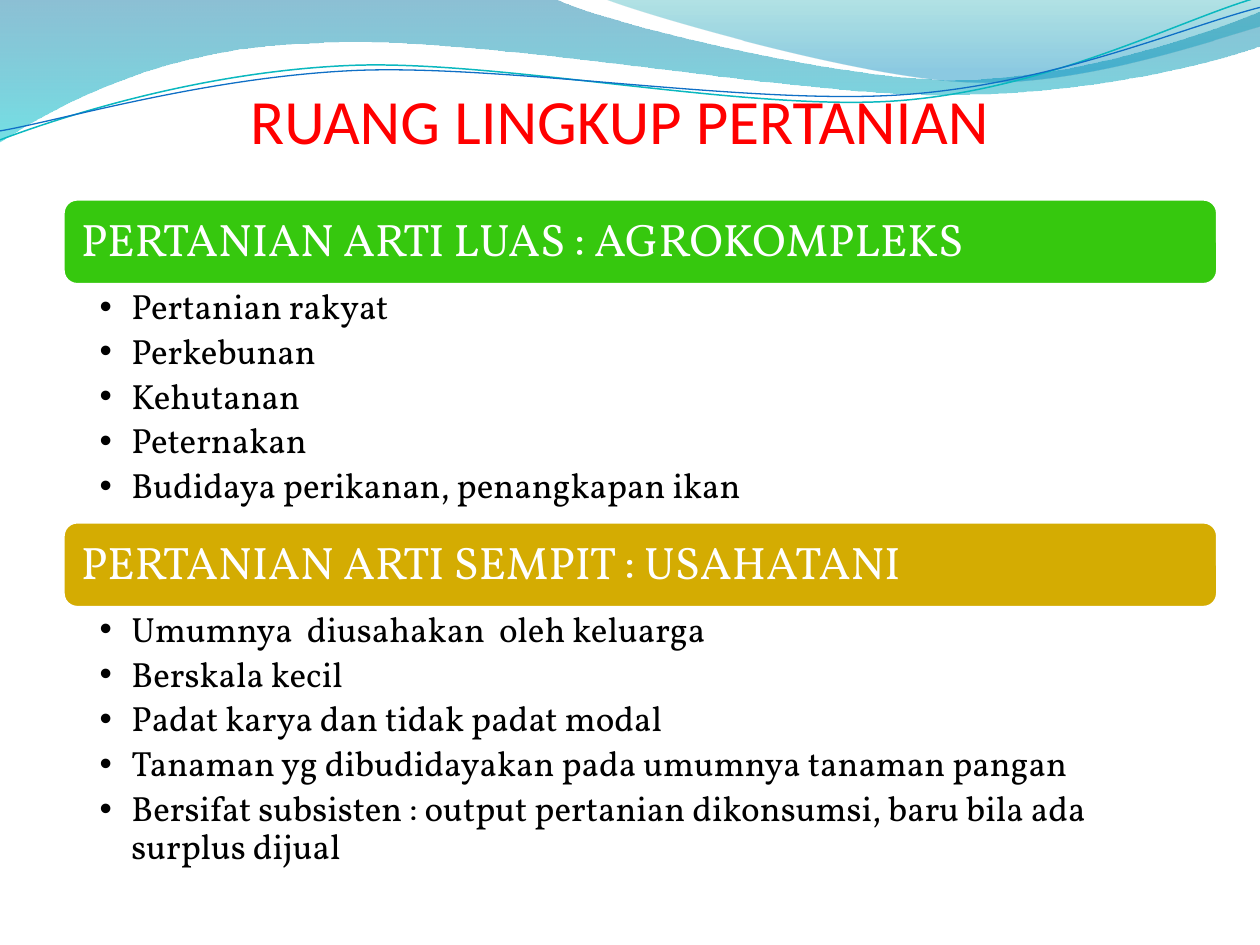
from math import cos, radians, sin

from lxml.etree import SubElement
from pptx import Presentation
from pptx.dml.color import RGBColor
from pptx.enum.shapes import MSO_SHAPE
from pptx.enum.text import MSO_ANCHOR, MSO_AUTO_SIZE, PP_ALIGN
from pptx.oxml.ns import qn
from pptx.util import Cm, Pt

COLORS = {
    "title": "FF0000", "broad": "36C80E", "narrow": "D4AC02",
    "white": "FFFFFF", "black": "000000", "teal_line": "0AB8BF",
    "blue_line": "0F6FC6", "deep_blue": "0074A1", "cyan": "00C6CF",
    "teal": "00A1A9", "sky": "008BBF",
}
BODY_FONT = "Vollkorn"
LINE_TILT = -2.7

WAVES = [
    {"start": (0, 0),
     "segments": [(11.18, -0.03),
                  (12.09, 0.43, 16.87, 1.6, 19.25, 1.6),
                  (21.67, 1.6, 24.33, 0.66, 25.4, 0.23),
                  (25.43, 0.91),
                  (24.97, 1.12, 22.1, 1.93, 18.95, 1.91),
                  (15.8, 1.91, 9.7, 0.71, 6.53, 0.86),
                  (3.28, 0.91, 1.17, 2.11, -0.03, 2.87)],
     "gradient": [(0, "deep_blue", 45), (100, "cyan", 55)]},
    {"start": (12.17, -0.03),
     "segments": [(12.93, 0.28, 17.32, 1.57, 19.53, 1.65),
                  (21.74, 1.75, 24.41, 0.81, 25.4, 0.53),
                  (25.4, 0)],
     "gradient": [(0, "teal", 30), (80, "sky", 45)]},
    {"start": (0, 2.82),
     "segments": [(1.22, 2.36, 4.01, 1.45, 7.04, 1.32),
                  (10.03, 1.19, 15.06, 2.26, 18.11, 2.03),
                  (21.16, 1.8, 23.83, 0.38, 25.35, -0.05)],
     "line": ("teal_line", 0.85), "center": (12.67, 1.46)},
    {"start": (0, 2.64),
     "segments": [(1.19, 2.44, 4.17, 1.55, 7.19, 1.42),
                  (10.24, 1.3, 15.16, 2.13, 18.21, 1.91),
                  (21.23, 1.7, 23.9, 0.53, 25.4, 0.15)],
     "line": ("blue_line", 0.75), "center": (12.69, 1.5)},
]

SECTIONS = [
    {"heading": "PERTANIAN ARTI LUAS : AGROKOMPLEKS", "color": "broad",
     "box": (1.27, 4.01, 23.28, 6.51),
     "items": ["Pertanian rakyat", "Perkebunan", "Kehutanan", "Peternakan",
               "Budidaya perikanan, penangkapan ikan"]},
    {"heading": "PERTANIAN ARTI SEMPIT : USAHATANI", "color": "narrow",
     "box": (1.27, 10.52, 23.28, 7.27),
     "items": ["Umumnya  diusahakan  oleh keluarga", "Berskala kecil",
               "Padat karya dan tidak padat modal",
               "Tanaman yg dibudidayakan pada umumnya tanaman pangan",
               "Bersifat subsisten : output pertanian dikonsumsi, "
               "baru bila ada surplus dijual"]},
]


def rgb(name):
    """Return the named colour."""
    return RGBColor.from_string(COLORS[name])


def place(shape, left, top, width, height):
    """Set a shape's box in centimetres."""
    shape.left, shape.top = Cm(left), Cm(top)
    shape.width, shape.height = Cm(width), Cm(height)


def set_margins(frame, left, top, right, bottom):
    """Set a text frame's margins in centimetres."""
    frame.margin_left, frame.margin_top = Cm(left), Cm(top)
    frame.margin_right, frame.margin_bottom = Cm(right), Cm(bottom)


def style_font(paragraph, name, size, color):
    """Set a paragraph's font, size and colour."""
    paragraph.font.name = name
    paragraph.font.size = Pt(size)
    paragraph.font.color.rgb = rgb(color)


def turn(point, center, degrees):
    """Rotate a point clockwise about a centre."""
    x, y = point[0] - center[0], point[1] - center[1]
    angle = radians(degrees)
    return (center[0] + x * cos(angle) - y * sin(angle),
            center[1] + x * sin(angle) + y * cos(angle))


def curve_outline(shape, segments):
    """Join the vertices of each cubic segment into one curve."""
    lines = list(shape.element.iter(qn("a:lnTo")))
    for segment in segments:
        group = lines[:len(segment) // 2]
        lines = lines[len(group):]
        if len(group) == 3:
            curve = SubElement(group[0].getparent(), qn("a:cubicBezTo"))
            group[0].addprevious(curve)
            for line in group:
                curve.append(line[0])
                line.getparent().remove(line)


def fill_gradient(shape, stops):
    """Fill a shape with a translucent gradient running downwards."""
    shape.fill.gradient()
    gradient = shape.element.spPr.find(qn("a:gradFill"))
    for child in list(gradient):
        gradient.remove(child)
    stop_list = SubElement(gradient, qn("a:gsLst"))
    for position, color, opacity in stops:
        stop = SubElement(stop_list, qn("a:gs"), pos=str(position * 1000))
        value = SubElement(stop, qn("a:srgbClr"), val=COLORS[color])
        SubElement(value, qn("a:alpha"), val=str(opacity * 1000))
    SubElement(gradient, qn("a:lin"), ang="5400000", scaled="0")


def add_waves(slide):
    """Draw the waves along the top edge, behind the placeholders."""
    for index, wave in enumerate(WAVES):
        points = [wave["start"]]
        for segment in wave["segments"]:
            points += zip(segment[::2], segment[1::2])
        if "center" in wave:
            points = [turn(point, wave["center"], -LINE_TILT)
                      for point in points]
        points = [(Cm(x), Cm(y)) for x, y in points]
        builder = slide.shapes.build_freeform(*points[0])
        builder.add_line_segments(points[1:], close="gradient" in wave)
        shape = builder.convert_to_shape()
        curve_outline(shape, wave["segments"])
        shape.shadow.inherit = False
        if "gradient" in wave:
            fill_gradient(shape, wave["gradient"])
            shape.line.fill.background()
        else:
            color, width = wave["line"]
            shape.rotation = LINE_TILT
            shape.fill.background()
            shape.line.color.rgb = rgb(color)
            shape.line.width = Pt(width)
        shape.element.getparent().insert(2 + index, shape.element)


def add_title(slide, left, top, width, height):
    """Fill the title placeholder."""
    title = slide.shapes.title
    place(title, left, top, width, height)
    frame = title.text_frame
    frame.text = "RUANG LINGKUP PERTANIAN"
    frame.auto_size = MSO_AUTO_SIZE.NONE
    frame.vertical_anchor = MSO_ANCHOR.BOTTOM
    set_margins(frame, 0, 0.13, 0, 0)
    paragraph = frame.paragraphs[0]
    paragraph.alignment = PP_ALIGN.CENTER
    style_font(paragraph, "Calibri", 36, "title")


def add_section(slide, placeholder, section):
    """Draw a heading bar with its bulleted list below."""
    left, top, width, height = section["box"]
    bar_height = 1.73
    bar = slide.shapes.add_shape(
        MSO_SHAPE.ROUNDED_RECTANGLE,
        Cm(left), Cm(top), Cm(width), Cm(bar_height))
    bar.shadow.inherit = False
    bar.fill.solid()
    bar.fill.fore_color.rgb = rgb(section["color"])
    bar.line.color.rgb = rgb("white")
    bar.line.width = Pt(2)
    frame = bar.text_frame
    frame.text = section["heading"]
    frame.vertical_anchor = MSO_ANCHOR.MIDDLE
    set_margins(frame, 0.28, 0.28, 0.28, 0.28)
    heading = frame.paragraphs[0]
    heading.alignment = PP_ALIGN.LEFT
    heading.line_spacing = 0.9
    style_font(heading, BODY_FONT, 26, "white")

    place(placeholder, left, top + bar_height, width, height - bar_height)
    frame = placeholder.text_frame
    frame.text = "\n".join(section["items"])
    frame.auto_size = MSO_AUTO_SIZE.NONE
    set_margins(frame, 0.74, 0.09, 0.51, 0.1)
    for paragraph in frame.paragraphs:
        style_font(paragraph, BODY_FONT, 20, "black")
        paragraph.level = 1
        paragraph.line_spacing = 0.9
        paragraph.space_before = Pt(0)
        paragraph.space_after = Pt(4)
        properties = paragraph._p.get_or_add_pPr()
        properties.set("marL", str(Cm(0.64)))
        properties.set("indent", str(Cm(-0.64)))
        bullet = SubElement(properties, qn("a:buChar"), char="•")
        properties.find(qn("a:spcAft")).addnext(bullet)


def main():
    """Build and save the presentation."""
    presentation = Presentation()
    presentation.slide_width, presentation.slide_height = Cm(25.4), Cm(19.05)
    slide = presentation.slides.add_slide(presentation.slide_layouts[3])
    add_waves(slide)
    add_title(slide, 1.06, 1.05, 22.86, 2.11)
    for index, section in enumerate(SECTIONS, start=1):
        add_section(slide, slide.placeholders[index], section)
    presentation.save("out.pptx")


if __name__ == "__main__":
    main()
